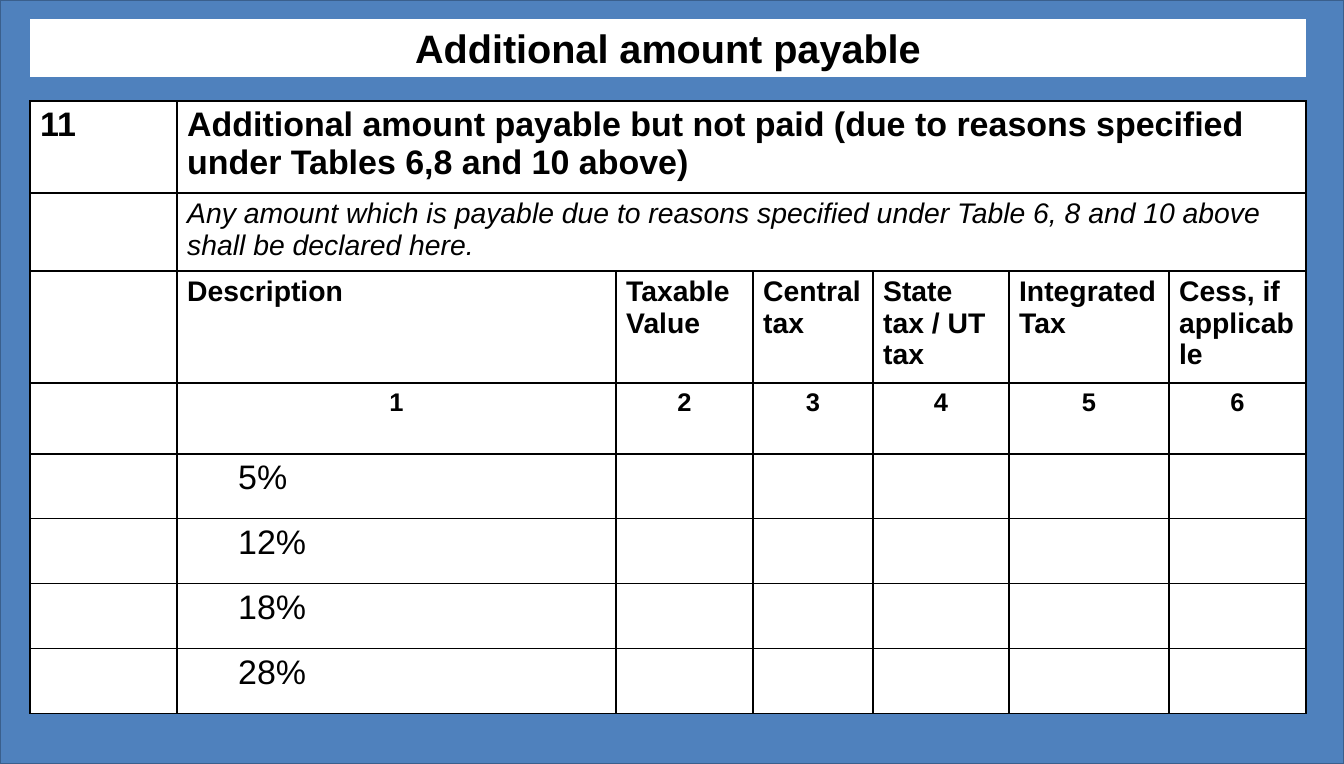
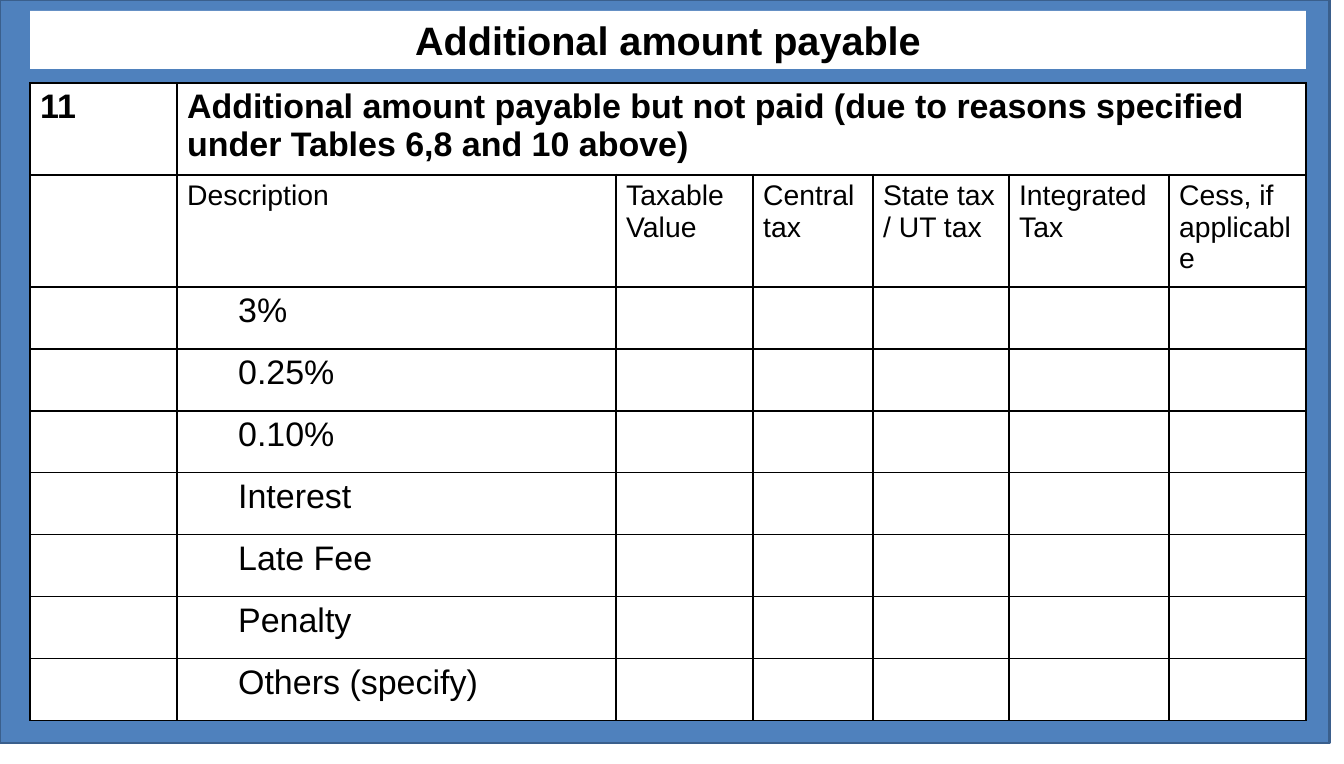
from lxml.etree import SubElement
from pptx import Presentation
from pptx.dml.color import RGBColor
from pptx.enum.shapes import MSO_SHAPE
from pptx.enum.text import MSO_ANCHOR, MSO_AUTO_SIZE, PP_ALIGN
from pptx.oxml.ns import qn
from pptx.util import Emu, Pt

SCALE = 8974
BLUE, EDGE, WHITE, BLACK = "4F81BD", "3A5F8C", "FFFFFF", "000000"
FONT = "Arial"
LEFT = 30
COLUMNS = [147, 439, 137, 120, 136, 160, 137]
TITLE = "Additional amount payable"
HEADING = ("Additional amount payable but not paid (due to reasons specified "
           "under Tables 6,8 and 10 above)")
NOTE = ("Any amount which is payable due to reasons specified under Table 6, 8 "
        "and 10 above shall be declared here.")
HEADERS = ["Description", "Taxable Value", "Central tax", "State tax / UT tax",
           "Integrated Tax", "Cess, if applicable"]


def px(length):
    return Emu(length * SCALE)


def color(code):
    return RGBColor.from_string(code)


def paint(target, code):
    target.fill.solid()
    target.fill.fore_color.rgb = color(code)


def write(frame, text, size=24, bold=False, italic=False, align=PP_ALIGN.LEFT, indent=0):
    paragraph = frame.paragraphs[0]
    paragraph.alignment = align
    if indent:
        properties = paragraph._p.get_or_add_pPr()
        properties.set("marL", str(px(indent)))
        properties.set("indent", "0")
    run = paragraph.add_run()
    run.text = text
    run.font.name = FONT
    run.font.size = Pt(size)
    run.font.bold = bold
    run.font.italic = italic
    run.font.color.rgb = color(BLACK)


def border(cell, **widths):
    properties = cell._tc.get_or_add_tcPr()
    for side in ("lnL", "lnR", "lnT", "lnB"):
        line = SubElement(properties, qn(f"a:{side}"), w=str(Pt(widths.get(side, 1))))
        SubElement(SubElement(line, qn("a:solidFill")), qn("a:srgbClr"), val=BLACK)


class Deck:
    def __init__(self, width, height):
        self.file = Presentation()
        self.file.slide_width = px(width)
        self.file.slide_height = px(height)
        self.slide = None

    def new_slide(self, title_top, band_width, band_height):
        self.slide = self.file.slides.add_slide(self.file.slide_layouts[5])
        self.title(title_top)
        self.band(band_width, band_height)

    def title(self, top):
        title = self.slide.shapes.title
        title.left, title.top = px(LEFT), px(top)
        title.width, title.height = px(sum(COLUMNS)), px(58)
        paint(title, WHITE)
        frame = title.text_frame
        frame.word_wrap = True
        frame.auto_size = MSO_AUTO_SIZE.NONE
        frame.vertical_anchor = MSO_ANCHOR.MIDDLE
        write(frame, TITLE, size=28, bold=True, align=PP_ALIGN.CENTER)

    def band(self, width, height):
        band = self.slide.shapes.add_shape(MSO_SHAPE.RECTANGLE, 0, 0, px(width), px(height))
        band.shadow.inherit = False
        paint(band, BLUE)
        band.line.color.rgb = color(EDGE)
        band.line.width = Pt(2)
        self.slide.shapes.title.element.addprevious(band.element)

    def table(self, top, rows):
        heights = [height for height, _, _ in rows]
        table = self.slide.shapes.add_table(
            len(rows), len(COLUMNS), px(LEFT), px(top),
            px(sum(COLUMNS)), px(sum(heights))).table
        table.first_row = table.horz_banding = False
        for column, width in zip(table.columns, COLUMNS):
            column.width = px(width)
        for index, (height, texts, style) in enumerate(rows):
            table.rows[index].height = px(height)
            for cell in table.rows[index].cells:
                border(cell, lnT=2 if index == 1 else 1, lnB=2 if index == 0 else 1)
                paint(cell, WHITE)
            if texts[1] in (HEADING, NOTE):
                table.cell(index, 1).merge(table.cell(index, len(COLUMNS) - 1))
            for column, text in enumerate(texts):
                if text:
                    write(table.cell(index, column).text_frame, text, **style)

    def save(self):
        self.file.save("out.pptx")


def entries(height, labels):
    return [(height, ["", label], {"indent": 51}) for label in labels]


def main():
    heading = (92, ["11", HEADING], {"bold": True})
    numbers = [str(number) for number in range(1, 7)]
    deck = Deck(1344, 764)

    deck.new_slide(19, 1344, 764)
    deck.table(101, [
        heading,
        (78, ["", NOTE], {"size": 20, "italic": True}),
        (112, ["", *HEADERS], {"size": 20, "bold": True}),
        (71, ["", *numbers], {"size": 18, "bold": True, "align": PP_ALIGN.CENTER}),
        *entries(65, ["5%", "12%", "18%", "28%"]),
    ])

    deck.new_slide(11, 1330, 743)
    deck.table(83, [
        heading,
        (112, ["", *HEADERS], {"size": 20}),
        *entries(62, ["3%", "0.25%", "0.10%", "Interest", "Late Fee", "Penalty",
                      "Others (specify)"]),
    ])
    deck.save()


if __name__ == "__main__":
    main()
